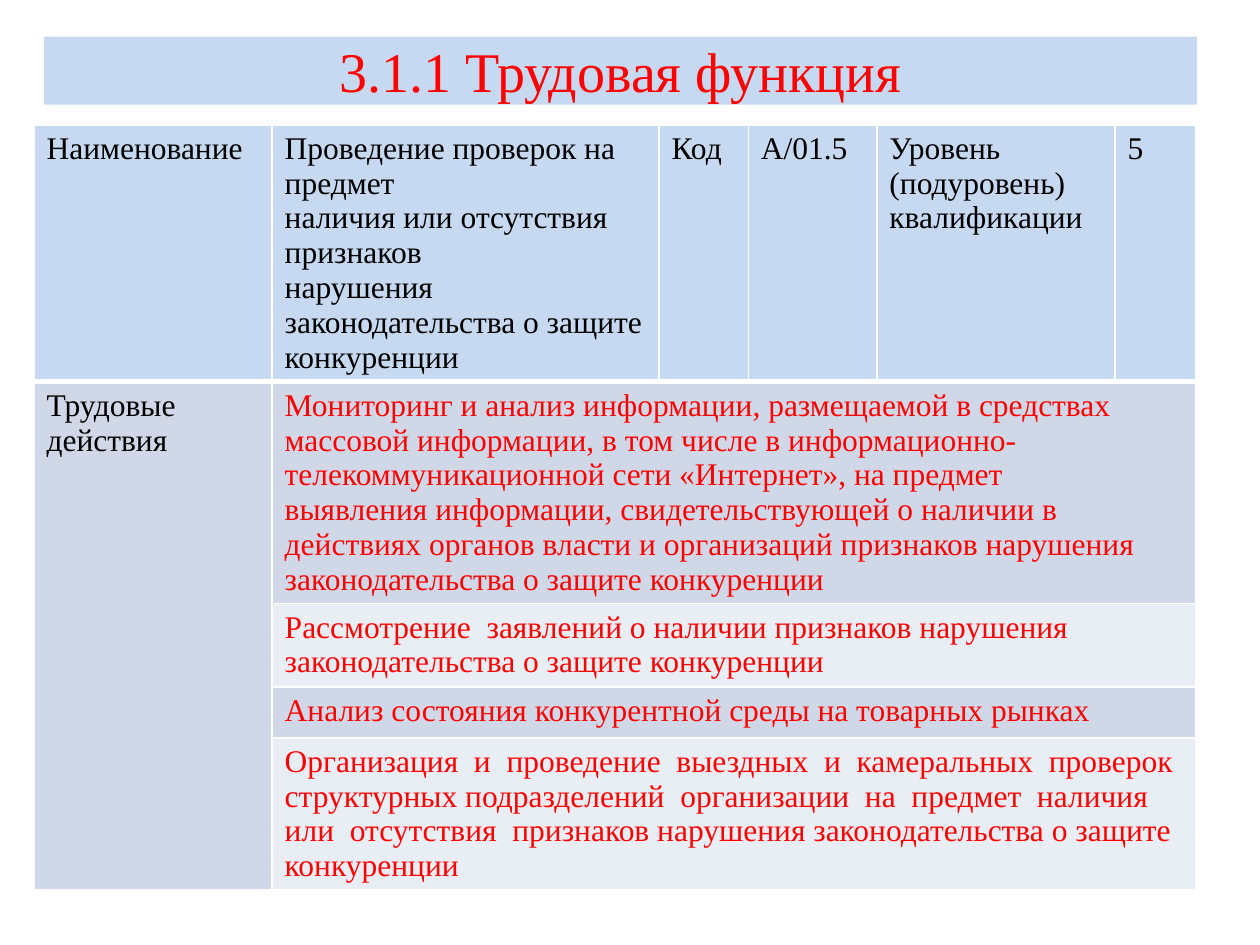
import pptx
import pptx.util
import pptx.dml.color
import pptx.enum.shapes
import pptx.enum.text
import pptx.oxml

THEME = {
    "font": "Times New Roman",
    "title_size": 32,
    "body_size": 18,
    "black": "000000",
    "red": "FF0000",
    "header": "C6D9F1",
    "band_dark": "D0D8E8",
    "band_light": "E9EDF4",
    "border": "FFFFFF",
}

prs = pptx.Presentation()
prs.slide_width = pptx.util.Inches(10)
prs.slide_height = pptx.util.Inches(7.5)
PCT_W = prs.slide_width / 100
PCT_H = prs.slide_height / 100
s = prs.slides.add_slide(prs.slide_layouts[6])


def write(tf, lines, size, color, align):
    """Fill a text frame with one paragraph per line."""
    for i, line in enumerate(lines):
        p = tf.paragraphs[0] if i == 0 else tf.add_paragraph()
        p.alignment = align
        r = p.add_run()
        r.text = line
        r.font.name = THEME["font"]
        r.font.size = pptx.util.Pt(size)
        r.font.bold = False
        r.font.color.rgb = pptx.dml.color.RGBColor.from_string(color)


def style_cell(cell, fill, bottom_width):
    """Set the fill of a cell and its four borders."""
    tc_pr = cell._tc.get_or_add_tcPr()
    for side, width in (("L", 1), ("R", 1), ("T", 1), ("B", bottom_width)):
        tc_pr.append(pptx.oxml.parse_xml(
            f'<a:ln{side} xmlns:a="http://schemas.openxmlformats.org/drawingml/2006/main"'
            f' w="{pptx.util.Pt(width)}"><a:solidFill><a:srgbClr val="{THEME["border"]}"/>'
            f'</a:solidFill></a:ln{side}>'))
    cell.fill.solid()
    cell.fill.fore_color.rgb = pptx.dml.color.RGBColor.from_string(fill)


# Title bar
sp = s.shapes.add_shape(
    pptx.enum.shapes.MSO_SHAPE.RECTANGLE,
    int(3.5 * PCT_W), int(3.87 * PCT_H), int(91.5 * PCT_W), int(7.2 * PCT_H))
sp.shadow.inherit = False
sp.fill.solid()
sp.fill.fore_color.rgb = pptx.dml.color.RGBColor.from_string(THEME["header"])
sp.line.fill.background()
tf = sp.text_frame
tf.word_wrap = True
tf.vertical_anchor = pptx.enum.text.MSO_ANCHOR.MIDDLE
write(tf, ["3.1.1 Трудовая функция"], THEME["title_size"], THEME["red"],
      pptx.enum.text.PP_ALIGN.CENTER)

# Table content: header cells, then the labour actions
header = [
    ["Наименование"],
    ["Проведение проверок на предмет",
     "наличия или отсутствия признаков",
     "нарушения законодательства о защите",
     "конкуренции"],
    ["Код"],
    ["А/01.5"],
    ["Уровень (подуровень) квалификации"],
    ["5"],
]
actions = [
    ["Мониторинг и анализ информации, размещаемой в средствах массовой "
     "информации, в том числе в информационно-телекоммуникационной сети "
     "«Интернет», на предмет",
     "выявления информации, свидетельствующей о наличии в действиях органов "
     "власти и организаций признаков нарушения законодательства о защите "
     "конкуренции"],
    ["Рассмотрение  заявлений о наличии признаков нарушения законодательства "
     "о защите конкуренции"],
    ["Анализ состояния конкурентной среды на товарных рынках"],
    ["Организация  и  проведение  выездных  и  камеральных  проверок  "
     "структурных подразделений  организации  на  предмет  наличия  или  "
     "отсутствия  признаков нарушения законодательства о защите конкуренции"],
]

# Table grid, in percent of the slide
col_shares = [18.9, 30.7, 7.1, 10.2, 18.9, 6.4]
row_shares = [27.2, 23.4, 8.8, 5.4, 16.1]
tbl = s.shapes.add_table(
    len(row_shares), len(col_shares), int(2.7 * PCT_W), int(13.2 * PCT_H),
    int(sum(col_shares) * PCT_W), int(sum(row_shares) * PCT_H)).table
for col, share in zip(tbl.columns, col_shares):
    col.width = int(share * PCT_W)
for row, share in zip(tbl.rows, row_shares):
    row.height = int(share * PCT_H)

# Fills and borders
bands = [THEME["band_dark"], THEME["band_light"]]
for i in range(len(row_shares)):
    for j in range(len(col_shares)):
        if i == 0:
            fill = THEME["header"]
        else:
            fill = bands[0] if j == 0 else bands[(i - 1) % 2]
        style_cell(tbl.cell(i, j), fill, 3 if i == 0 else 1)

# Merged areas
last_row, last_col = len(row_shares) - 1, len(col_shares) - 1
tbl.cell(1, 0).merge(tbl.cell(last_row, 0))
for i in range(1, last_row + 1):
    tbl.cell(i, 1).merge(tbl.cell(i, last_col))

# Cell text
left = pptx.enum.text.PP_ALIGN.LEFT
for j, lines in enumerate(header):
    write(tbl.cell(0, j).text_frame, lines, THEME["body_size"], THEME["black"], left)
write(tbl.cell(1, 0).text_frame, ["Трудовые действия"], THEME["body_size"],
      THEME["black"], left)
for i, lines in enumerate(actions, start=1):
    write(tbl.cell(i, 1).text_frame, lines, THEME["body_size"], THEME["red"], left)

prs.save("out.pptx")
